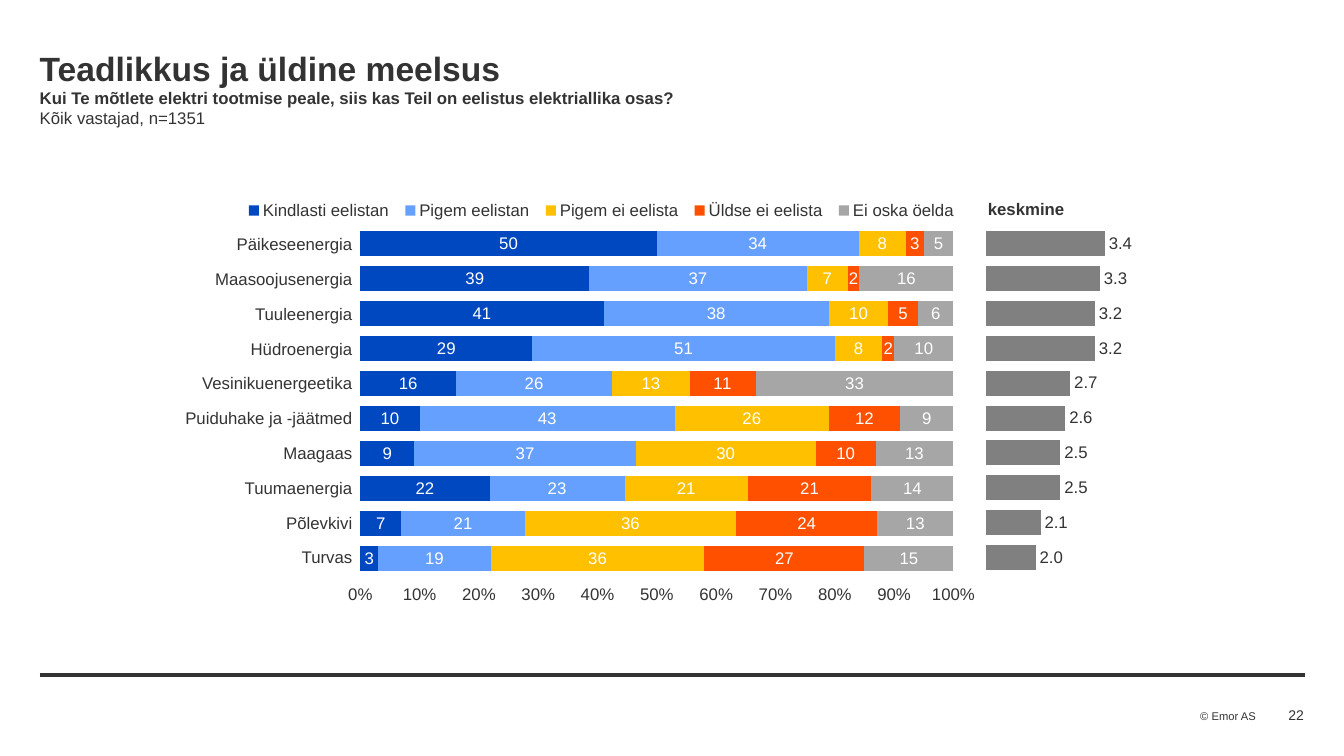
from lxml.etree import SubElement
from pptx import Presentation
from pptx.chart.data import CategoryChartData
from pptx.dml.color import RGBColor
from pptx.enum.chart import (XL_CHART_TYPE, XL_LABEL_POSITION, XL_LEGEND_POSITION,
                             XL_TICK_LABEL_POSITION, XL_TICK_MARK)
from pptx.enum.shapes import MSO_CONNECTOR
from pptx.enum.text import MSO_ANCHOR, PP_ALIGN
from pptx.oxml.ns import qn
from pptx.util import Pt

FONT = "Arial"
DARK = RGBColor(0x33, 0x33, 0x33)
WHITE = RGBColor(0xFF, 0xFF, 0xFF)
MEAN_GREY = RGBColor(0x80, 0x80, 0x80)
BLUE = RGBColor(0x00, 0x48, 0xBF)
LIGHT_BLUE = RGBColor(0x66, 0xA0, 0xFF)
YELLOW = RGBColor(0xFF, 0xC0, 0x00)
ORANGE = RGBColor(0xFF, 0x50, 0x00)
GREY = RGBColor(0xA6, 0xA6, 0xA6)

SOURCES = ["Päikeseenergia", "Maasoojusenergia", "Tuuleenergia", "Hüdroenergia",
           "Vesinikuenergeetika", "Puiduhake ja -jäätmed", "Maagaas",
           "Tuumaenergia", "Põlevkivi", "Turvas"]
ANSWERS = [
    ("Kindlasti eelistan", [50, 39, 41, 29, 16, 10, 9, 22, 7, 3], BLUE),
    ("Pigem eelistan", [34, 37, 38, 51, 26, 43, 37, 23, 21, 19], LIGHT_BLUE),
    ("Pigem ei eelista", [8, 7, 10, 8, 13, 26, 30, 21, 36, 36], YELLOW),
    ("Üldse ei eelista", [3, 2, 5, 2, 11, 12, 10, 21, 24, 27], ORANGE),
    ("Ei oska öelda", [5, 16, 6, 10, 33, 9, 13, 14, 13, 15], GREY),
]
MEANS = [("keskmine", [3.4, 3.3, 3.2, 3.2, 2.7, 2.6, 2.5, 2.5, 2.1, 2.0], MEAN_GREY)]


def write(p, text, size=12, bold=False, align=PP_ALIGN.LEFT):
    p.alignment = align
    r = p.add_run()
    r.text = text
    r.font.name, r.font.size, r.font.bold = FONT, Pt(size), bold
    r.font.color.rgb = DARK


def add_text(slide, box, lines, wrap=True, anchor=MSO_ANCHOR.TOP):
    """Add a text box; lines holds (text, format) pairs, one per paragraph."""
    tf = slide.shapes.add_textbox(*map(Pt, box)).text_frame
    tf.margin_left = tf.margin_right = tf.margin_top = tf.margin_bottom = 0
    tf.word_wrap, tf.vertical_anchor = wrap, anchor
    for i, (text, fmt) in enumerate(lines):
        write(tf.add_paragraph() if i else tf.paragraphs[0], text, **fmt)


def add_rule(slide, x1, x2, y):
    line = slide.shapes.add_connector(MSO_CONNECTOR.STRAIGHT, Pt(x1), Pt(y), Pt(x2), Pt(y))
    line.line.color.rgb, line.line.width = DARK, Pt(3)
    SubElement(line._element.spPr, qn("a:effectLst"))


def add_label_table(slide, left, top, widths, row_height):
    rows = len(SOURCES) + 1
    table = slide.shapes.add_table(rows, len(widths), Pt(left), Pt(top),
                                   Pt(sum(widths)), Pt(row_height * rows)).table
    table.first_row = table.horz_banding = False
    for col, width in zip(table.columns, widths):
        col.width = Pt(width)
    for cell in table.iter_cells():
        cell.fill.background()
        cell.vertical_anchor = MSO_ANCHOR.MIDDLE
        cell.margin_left = cell.margin_right = cell.margin_top = Pt(0.7)
        cell.margin_bottom = 0
        cell.text_frame.paragraphs[0].font.size = Pt(12)
    header = table.cell(0, len(widths) - 1)
    header.margin_left = Pt(2.9)
    header.margin_top = 0
    write(header.text_frame.paragraphs[0], "keskmine", bold=True)
    for i, source in enumerate(SOURCES, 1):
        write(table.cell(i, 0).text_frame.paragraphs[0], source, align=PP_ALIGN.RIGHT)


def set_layout(element, x, y, w, h):
    """Place a plot area or legend by fractions of the chart's size."""
    legend_pos = element.find(qn("c:legendPos"))
    layout = element.find(qn("c:layout"))
    if layout is None:
        layout = element.makeelement(qn("c:layout"))
        if legend_pos is None:
            element.insert(0, layout)
        else:
            legend_pos.addnext(layout)
    manual = SubElement(layout, qn("c:manualLayout"))
    if legend_pos is None:
        SubElement(manual, qn("c:layoutTarget")).set("val", "inner")
    for tag, value in (("xMode", "edge"), ("yMode", "edge"),
                       ("x", x), ("y", y), ("w", w), ("h", h)):
        SubElement(manual, qn(f"c:{tag}")).set("val", str(value))


def add_bar_chart(slide, kind, box, series, plot_place, value_range, label_color,
                  label_position, label_format):
    data = CategoryChartData()
    data.categories = SOURCES
    for name, values, _ in series:
        data.add_series(name, values)
    chart = slide.shapes.add_chart(kind, *map(Pt, box), data).chart
    chart.has_title = chart.has_legend = False
    chart.font.name, chart.font.size, chart.font.color.rgb = FONT, Pt(12), DARK

    plot = chart.plots[0]
    plot.gap_width, plot.vary_by_categories = 40, False
    for ser, (_, _, color) in zip(plot.series, series):
        ser.format.fill.solid()
        ser.format.fill.fore_color.rgb = color
        labels = ser.data_labels
        labels.show_value, labels.position = True, label_position
        labels.number_format, labels.number_format_is_linked = label_format, False
        labels.font.name, labels.font.size = FONT, Pt(12)
        labels.font.color.rgb = label_color

    cats, vals = chart.category_axis, chart.value_axis
    cats.visible, cats.reverse_order = False, True
    vals.minimum_scale, vals.maximum_scale = value_range
    vals.has_major_gridlines = False
    vals.major_tick_mark = XL_TICK_MARK.NONE
    vals.format.line.fill.background()
    set_layout(chart._chartSpace.chart.plotArea, *plot_place)
    return chart


def main():
    prs = Presentation()
    prs.slide_width, prs.slide_height = Pt(960), Pt(540)
    slide = prs.slides.add_slide(prs.slide_layouts[6])

    add_rule(slide, 28.4, 932, 482)
    add_text(slide, (857.3, 507, 40, 9.5), [("© Emor AS", {"size": 8})], wrap=False)
    add_label_table(slide, 0, 137.2, (252.4, 450.3, 144), 24.87)
    add_text(slide, (28.4, 34, 903, 56), [
        ("Teadlikkus ja üldine meelsus", {"size": 24, "bold": True}),
        ("Kui Te mõtlete elektri tootmise peale, siis kas Teil on eelistus "
         "elektriallika osas?", {"bold": True}),
        ("Kõik vastajad, n=1351", {}),
    ])

    means = add_bar_chart(
        slide, XL_CHART_TYPE.BAR_CLUSTERED, (695.5, 151.2, 159, 269.3), MEANS,
        (0.056, 0.039, 0.889, 0.925), (1, 5), DARK,
        XL_LABEL_POSITION.OUTSIDE_END, "#,##0.0")
    means.value_axis.tick_label_position = XL_TICK_LABEL_POSITION.NONE

    answers = add_bar_chart(
        slide, XL_CHART_TYPE.BAR_STACKED_100, (167.5, 126.7, 535, 315.4), ANSWERS,
        (0.168, 0.111, 0.792, 0.792), (0, 1), WHITE,
        XL_LABEL_POSITION.CENTER, "0")
    answers.plots[0].overlap = 100
    axis = answers.value_axis
    axis.major_unit = 0.1
    axis.tick_label_position = XL_TICK_LABEL_POSITION.HIGH
    axis.tick_labels.number_format = "0%"
    axis.tick_labels.number_format_is_linked = False
    answers.has_legend = True
    legend = answers.legend
    legend.position, legend.include_in_layout = XL_LEGEND_POSITION.TOP, False
    legend.font.name, legend.font.size, legend.font.color.rgb = FONT, Pt(12), DARK
    set_layout(legend._element, 0.005, 0.04, 0.97, 0.07)

    add_text(slide, (855, 503, 76.3, 16), [("22", {"size": 10, "align": PP_ALIGN.RIGHT})],
             anchor=MSO_ANCHOR.MIDDLE)
    prs.save("out.pptx")


if __name__ == "__main__":
    main()
